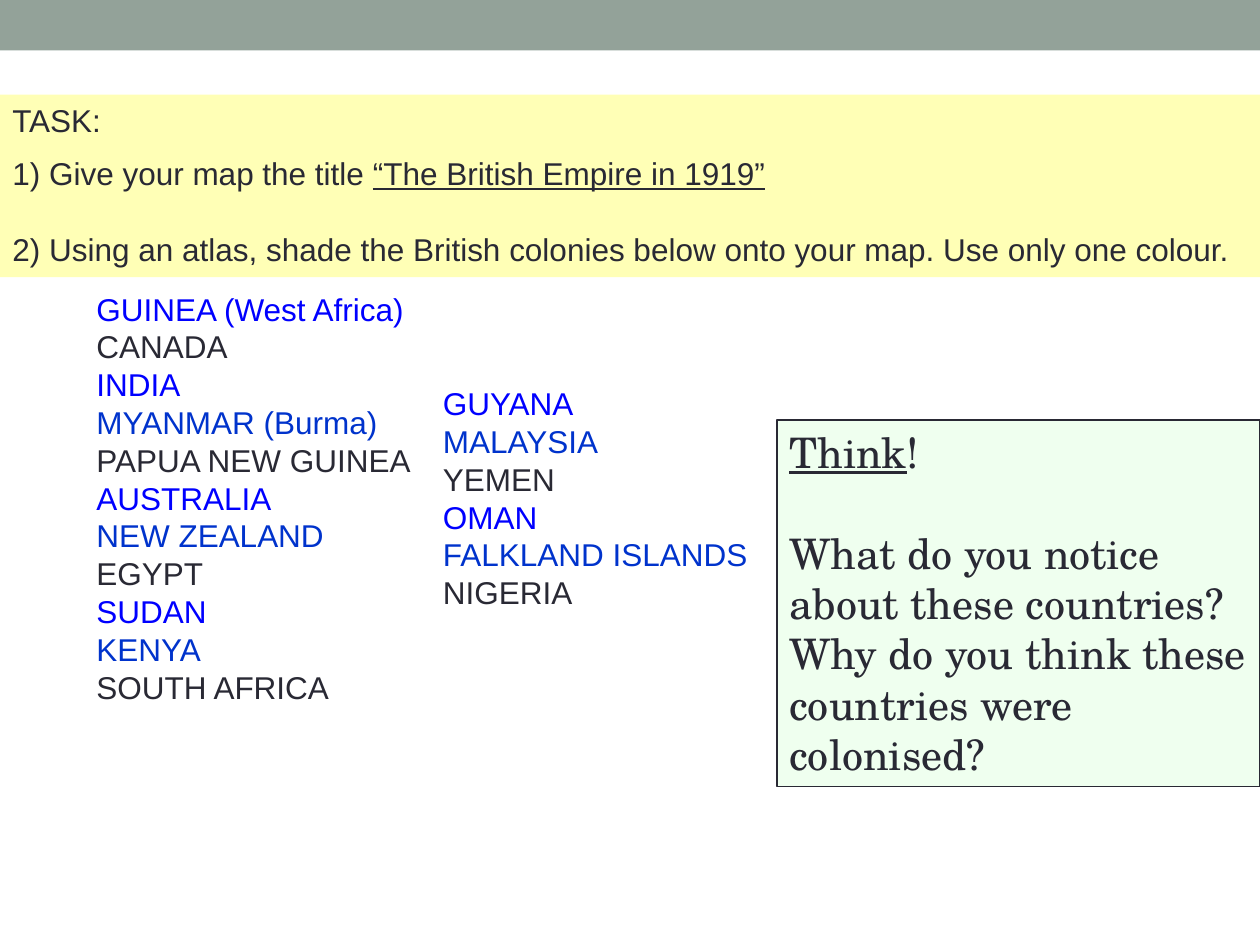
from dataclasses import dataclass

from lxml.etree import SubElement
from pptx import Presentation
from pptx.dml.color import RGBColor
from pptx.enum.shapes import MSO_SHAPE
from pptx.enum.text import MSO_ANCHOR, PP_ALIGN
from pptx.oxml.ns import qn
from pptx.slide import Slide
from pptx.util import Pt

COLORS = {
    "band": "93A299",
    "task": "FFFF99",
    "think": "CCFFCC",
    "dark": "292934",
    "bright": "0000FF",
    "blue": "0033CC",
}
LINE_SPACING = 1.2


@dataclass
class SlideBuilder:
    """Draws styled panels and text on the current slide."""

    slide: Slide
    font_name: str = "Arial"
    font_size: float = 18

    def color(self, name):
        return RGBColor.from_string(COLORS[name])

    def panel(self, box, fill, opacity=100, outlined=False):
        shape = self.slide.shapes.add_shape(MSO_SHAPE.RECTANGLE, *map(Pt, box))
        shape.shadow.inherit = False
        shape.fill.solid()
        shape.fill.fore_color.rgb = self.color(fill)
        if opacity < 100:
            fill_color = shape.element.spPr.find(qn("a:solidFill"))[0]
            SubElement(fill_color, qn("a:alpha"), val=str(opacity * 1000))
        if outlined:
            shape.line.color.rgb = self.color("dark")
            shape.line.width = Pt(0.75)
        else:
            shape.line.fill.background()
        return shape

    def add_text(self, shape, paragraphs, font_name=None, font_size=None):
        size = font_size or self.font_size
        frame = shape.text_frame
        frame.word_wrap = True
        frame.vertical_anchor = MSO_ANCHOR.TOP
        for index, (space_before, color, runs) in enumerate(paragraphs):
            paragraph = frame.add_paragraph() if index else frame.paragraphs[0]
            paragraph.alignment = PP_ALIGN.LEFT
            paragraph.line_spacing = Pt(size * LINE_SPACING)
            paragraph.space_before = Pt(space_before)
            paragraph.font.name = font_name or self.font_name
            paragraph.font.size = Pt(size)
            paragraph.font.color.rgb = self.color(color)
            for text, underlined in runs:
                run = paragraph.add_run()
                run.text = text
                run.font.underline = underlined

    def country_list(self, box, countries):
        shape = self.slide.shapes.add_textbox(*map(Pt, box))
        self.add_text(shape, [(0, color, [(name, False)]) for name, color in countries])


def main():
    presentation = Presentation()
    presentation.slide_width, presentation.slide_height = Pt(720), Pt(540)
    builder = SlideBuilder(presentation.slides.add_slide(presentation.slide_layouts[6]))

    builder.panel((0, 0, 720, 28.8), "band")

    task = builder.panel((0, 54, 720, 104.4), "task", opacity=71)
    builder.add_text(task, [
        (0, "dark", [("TASK:", False)]),
        (9, "dark", [
            ("1) Give your map the title ", False),
            ("“The British Empire in 1919”", True),
        ]),
        (21.6, "dark", [(
            "2) Using an atlas, shade the British colonies below onto your map. "
            "Use only one colour.", False,
        )]),
    ])

    builder.country_list((48, 162, 198, 244.8), [
        ("GUINEA (West Africa)", "bright"),
        ("CANADA", "dark"),
        ("INDIA", "bright"),
        ("MYANMAR (Burma)", "blue"),
        ("PAPUA NEW GUINEA", "dark"),
        ("AUSTRALIA", "bright"),
        ("NEW ZEALAND", "blue"),
        ("EGYPT", "dark"),
        ("SUDAN", "bright"),
        ("KENYA", "blue"),
        ("SOUTH AFRICA", "dark"),
    ])
    builder.country_list((246, 216, 198, 158.4), [
        ("GUYANA", "bright"),
        ("MALAYSIA", "blue"),
        ("YEMEN", "dark"),
        ("OMAN", "bright"),
        ("FALKLAND ISLANDS", "blue"),
        ("NIGERIA", "dark"),
    ])

    think = builder.panel((444, 240, 276, 209.5), "think", opacity=30, outlined=True)
    builder.add_text(think, [
        (0, "dark", [("Think", True), ("!", False)]),
        (28.8, "dark", [(
            "What do you notice about these countries? "
            "Why do you think these countries were colonised?", False,
        )]),
    ], font_name="TeX Gyre Schola", font_size=24)

    presentation.save("out.pptx")


if __name__ == "__main__":
    main()
